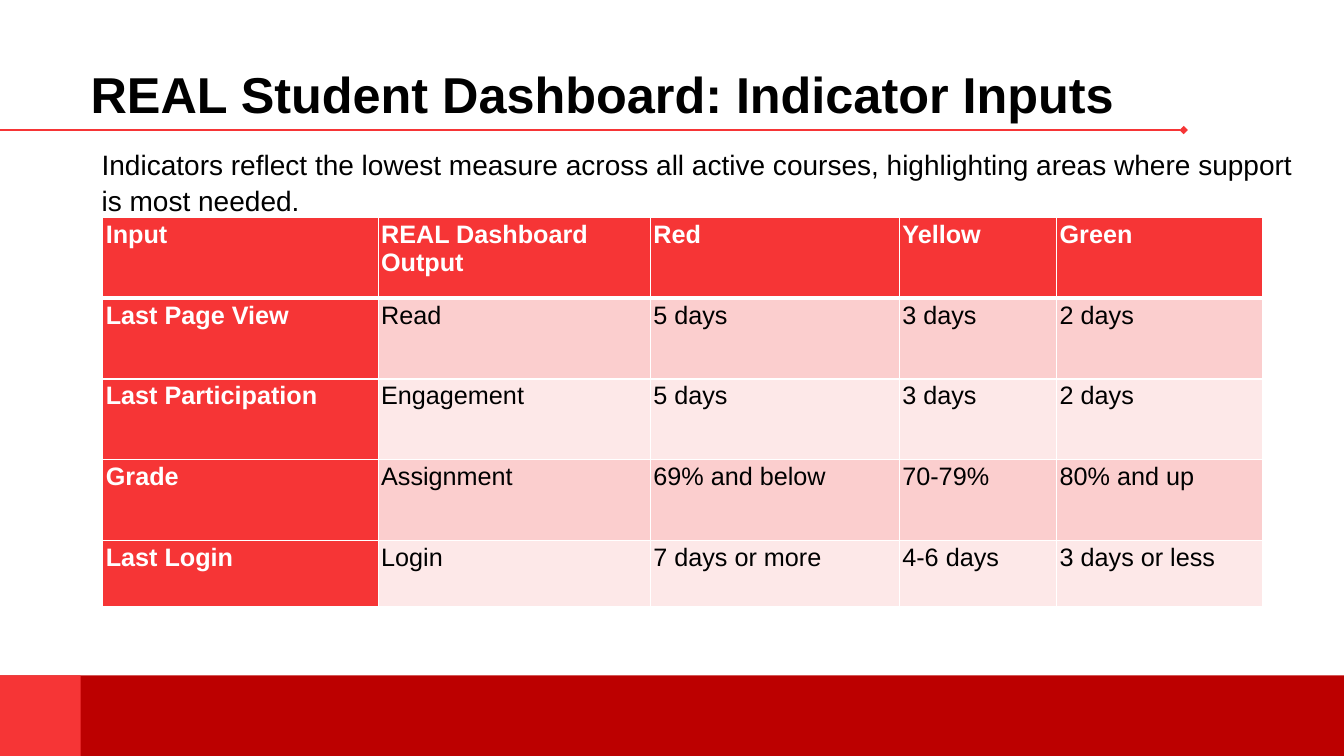
"""Build the slide listing the indicator inputs of the student dashboard."""
import pptx
import pptx.dml.color
import pptx.enum.shapes
import pptx.enum.text
import pptx.oxml.ns
import pptx.util
from lxml import etree

Inches = pptx.util.Inches
Pt = pptx.util.Pt
Anchor = pptx.enum.text.MSO_ANCHOR

RED, DARK_RED, WHITE, BLACK = "F63536", "BC0000", "FFFFFF", "000000"
BANDS = ["FBCECE", "FDE8E8"]
TITLE = "REAL Student Dashboard: Indicator Inputs"
SUMMARY = ("Indicators reflect the lowest measure across all active courses, "
           "highlighting areas where support is most needed.")
ROWS = [
    ["Input", "REAL Dashboard\vOutput", "Red", "Yellow", "Green"],
    ["Last Page View", "Read", "5 days", "3 days", "2 days"],
    ["Last Participation", "Engagement", "5 days", "3 days", "2 days"],
    ["Grade", "Assignment", "69% and below", "70-79%", "80% and up"],
    ["Last Login", "Login", "7 days or more", "4-6 days", "3 days or less"],
]
COLUMN_WIDTHS = [2.73, 2.7, 2.47, 1.56, 2.04]
ROW_HEIGHTS = [0.8, 0.8, 0.8, 0.8, 0.66]
FOOTER_BARS = [(0, 13.33, DARK_RED), (0, 0.8, RED)]
FOOTER_TOP, FOOTER_HEIGHT = 6.7, 0.8


def rgb(color):
    return pptx.dml.color.RGBColor.from_string(color)


def set_all(target, values):
    for name, value in values.items():
        setattr(target, name, value)


def add_element(parent, tag, **attributes):
    return etree.SubElement(parent, pptx.oxml.ns.qn(tag), attributes)


def set_margins(target, inset):
    sides = ["left", "right", "top", "bottom"]
    set_all(target, {f"margin_{side}": Inches(inset) for side in sides})


def write(text_frame, text, size, color=BLACK, bold=False):
    text_frame.text = text
    for paragraph in text_frame.paragraphs:
        for run in paragraph.runs:
            set_all(run.font, {"name": "Arial", "size": Pt(size), "bold": bold})
            run.font.color.rgb = rgb(color)


def add_text(slide, box, text, size, anchor=Anchor.TOP, bold=False):
    text_frame = slide.shapes.add_textbox(*map(Inches, box)).text_frame
    set_all(text_frame, {"word_wrap": True, "vertical_anchor": anchor})
    set_margins(text_frame, 0.1)
    write(text_frame, text, size, bold=bold)
    return text_frame.paragraphs[0]


def add_footer(slide):
    for left, width, color in FOOTER_BARS:
        bar = slide.shapes.add_shape(
            pptx.enum.shapes.MSO_SHAPE.RECTANGLE,
            *map(Inches, (left, FOOTER_TOP, width, FOOTER_HEIGHT)))
        bar.shadow.inherit = False
        bar.fill.solid()
        bar.fill.fore_color.rgb = rgb(color)
        bar.line.fill.background()


def add_title_rule(slide):
    rule = slide.shapes.add_connector(
        pptx.enum.shapes.MSO_CONNECTOR.STRAIGHT,
        *map(Inches, (-0.02, 1.29, 11.74, 1.29)))
    rule.line.width = Pt(1.5)
    rule.line.color.rgb = rgb(RED)
    add_element(rule.line._get_or_add_ln(), "a:tailEnd", type="diamond")
    add_element(rule._element.spPr, "a:effectLst")


def set_borders(cell, widths):
    properties = cell._tc.get_or_add_tcPr()
    for side, width in widths.items():
        border = add_element(properties, f"a:ln{side}", w=str(Pt(width)))
        add_element(add_element(border, "a:solidFill"), "a:srgbClr", val=WHITE)


def add_input_table(slide):
    frame = slide.shapes.add_table(
        len(ROWS), len(COLUMN_WIDTHS), Inches(1.02), Inches(2.16),
        Inches(sum(COLUMN_WIDTHS)), Inches(sum(ROW_HEIGHTS)))
    table = frame.table
    for column, width in zip(table.columns, COLUMN_WIDTHS):
        column.width = Inches(width)
    for row, height in zip(table.rows, ROW_HEIGHTS):
        row.height = Inches(height)
    for row_index, texts in enumerate(ROWS):
        for column_index, text in enumerate(texts):
            cell = table.cell(row_index, column_index)
            heading = row_index == 0 or column_index == 0
            set_margins(cell, 0.03)
            write(cell.text_frame, text, 18, WHITE if heading else BLACK, heading)
            set_borders(cell, {"L": 1, "R": 1,
                               "T": 3 if row_index == 1 else 1,
                               "B": 3 if row_index == 0 else 1})
            cell.fill.solid()
            cell.fill.fore_color.rgb = rgb(
                RED if heading else BANDS[(row_index - 1) % 2])


def main():
    presentation = pptx.Presentation()
    set_all(presentation, {"slide_width": Inches(13.33),
                           "slide_height": Inches(7.5)})
    slide = presentation.slides.add_slide(presentation.slide_layouts[6])
    add_title_rule(slide)
    add_footer(slide)
    add_text(slide, (0.8, 0.53, 10.93, 0.8), TITLE, 36, Anchor.BOTTOM, True)
    summary = add_text(slide, (0.8, 1.35, 12.17, 4.7), SUMMARY, 20)
    summary.line_spacing = 1.05
    summary._p.get_or_add_pPr().set("marL", str(Inches(0.11)))
    add_input_table(slide)
    presentation.save("out.pptx")


if __name__ == "__main__":
    main()
